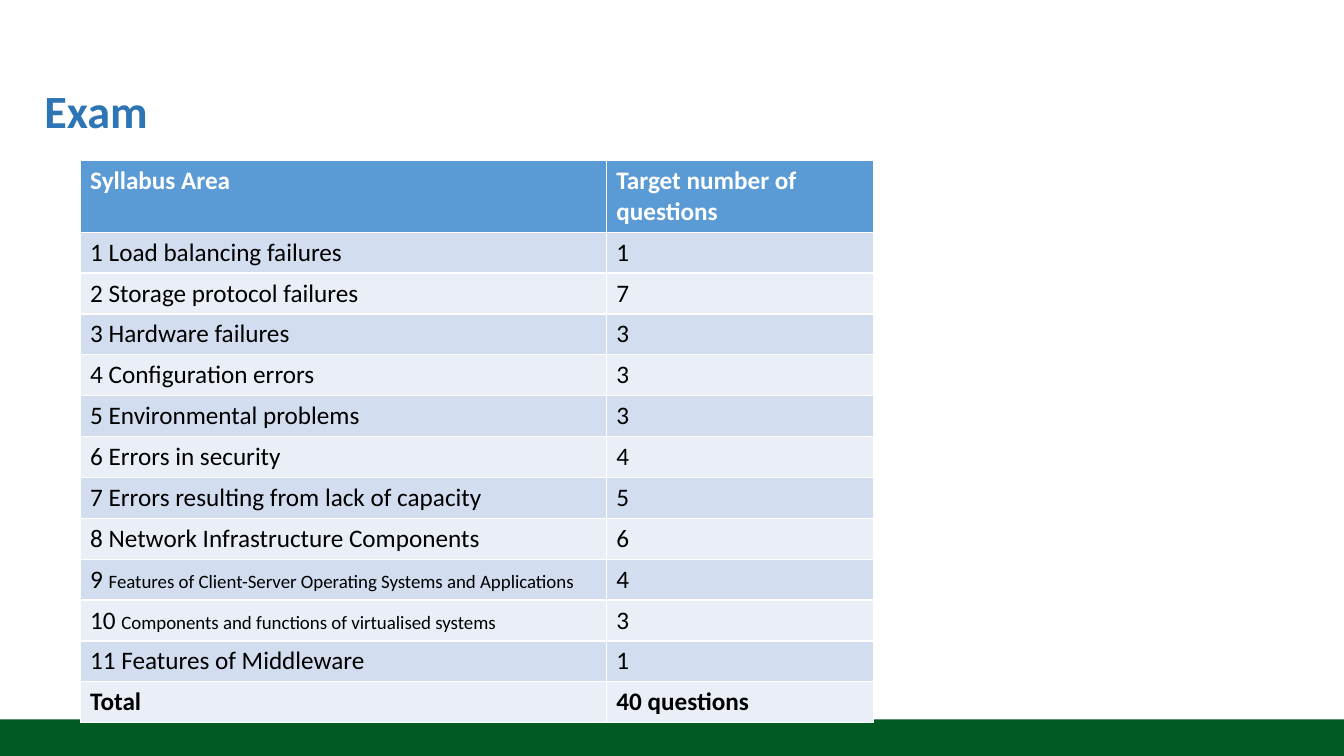
from pptx import Presentation
from pptx.dml.color import RGBColor
from pptx.enum.shapes import MSO_SHAPE
from pptx.enum.text import MSO_ANCHOR
from pptx.util import Cm, Pt

WIDE, HIGH = 33.87, 19.05
HEAD = ("Syllabus Area", "Target number of questions")
AREAS = [
    ("Load balancing failures", 1),
    ("Storage protocol failures", 7),
    ("Hardware failures", 3),
    ("Configuration errors", 3),
    ("Environmental problems", 3),
    ("Errors in security", 4),
    ("Errors resulting from lack of capacity", 5),
    ("Network Infrastructure Components", 6),
    ("Features of Client-Server Operating Systems and Applications", 4),
    ("Components and functions of virtualised systems", 3),
    ("Features of Middleware", 1),
]
SMALL = (9, 10)


def color(code):
    return RGBColor.from_string(code)


def style(para, size, code, bold):
    font = para.font
    font.name = "Calibri"
    font.size = Pt(size)
    font.bold = bold
    font.color.rgb = color(code)


def add_footer(slide, left, top, width, height):
    bar = slide.shapes.add_shape(
        MSO_SHAPE.RECTANGLE, Cm(left), Cm(top), Cm(width), Cm(height))
    bar.shadow.inherit = False
    bar.fill.solid()
    bar.fill.fore_color.rgb = color("015A22")
    bar.line.fill.background()


def add_title(slide, left, top, width, height):
    box = slide.shapes.add_textbox(Cm(left), Cm(top), Cm(width), Cm(height))
    frame = box.text_frame
    frame.word_wrap = True
    frame.vertical_anchor = MSO_ANCHOR.MIDDLE
    para = frame.paragraphs[0]
    para.text = "Exam"
    para.line_spacing = 0.9
    style(para, 33, "2E75B6", True)


def fill_cell(cell, text, fill, ink, bold, small=""):
    cell.fill.solid()
    cell.fill.fore_color.rgb = color(fill)
    para = cell.text_frame.paragraphs[0]
    para.add_run().text = text
    style(para, 18, ink, bold)
    if small:
        run = para.add_run()
        run.text = small
        run.font.size = Pt(13.5)


def add_grid(slide, left, top, width, height):
    count = len(AREAS) + 2
    first = 1.8
    step = (height - first) / (count - 1)
    grid = slide.shapes.add_table(
        count, 2, Cm(left), Cm(top), Cm(width), Cm(height)).table
    grid.columns[0].width = Cm(13.26)
    grid.columns[1].width = Cm(width - 13.26)
    for index, row in enumerate(grid.rows):
        row.height = Cm(step if index else first)
    for col, text in enumerate(HEAD):
        fill_cell(grid.cell(0, col), text, "5B9BD5", "FFFFFF", True)
    for index, (area, score) in enumerate(AREAS, 1):
        fill = "D2DEEF" if index % 2 else "EAEFF7"
        small = area if index in SMALL else ""
        text = f"{index} " if small else f"{index} {area}"
        fill_cell(grid.cell(index, 0), text, fill, "000000", False, small)
        fill_cell(grid.cell(index, 1), str(score), fill, "000000", False)
    total = sum(score for _, score in AREAS)
    for col, text in enumerate(("Total", f"{total} questions")):
        fill_cell(grid.cell(count - 1, col), text, "EAEFF7", "000000", True)


def main():
    deck = Presentation()
    deck.slide_width, deck.slide_height = Cm(WIDE), Cm(HIGH)
    slide = deck.slides.add_slide(deck.slide_layouts[6])
    add_footer(slide, 0, HIGH - 0.92, WIDE, 0.92)
    add_title(slide, 0.87, 1.02, 32.2, 3.68)
    add_grid(slide, 2.02, 4.05, 19.99, 14.16)
    deck.save("out.pptx")


if __name__ == "__main__":
    main()
